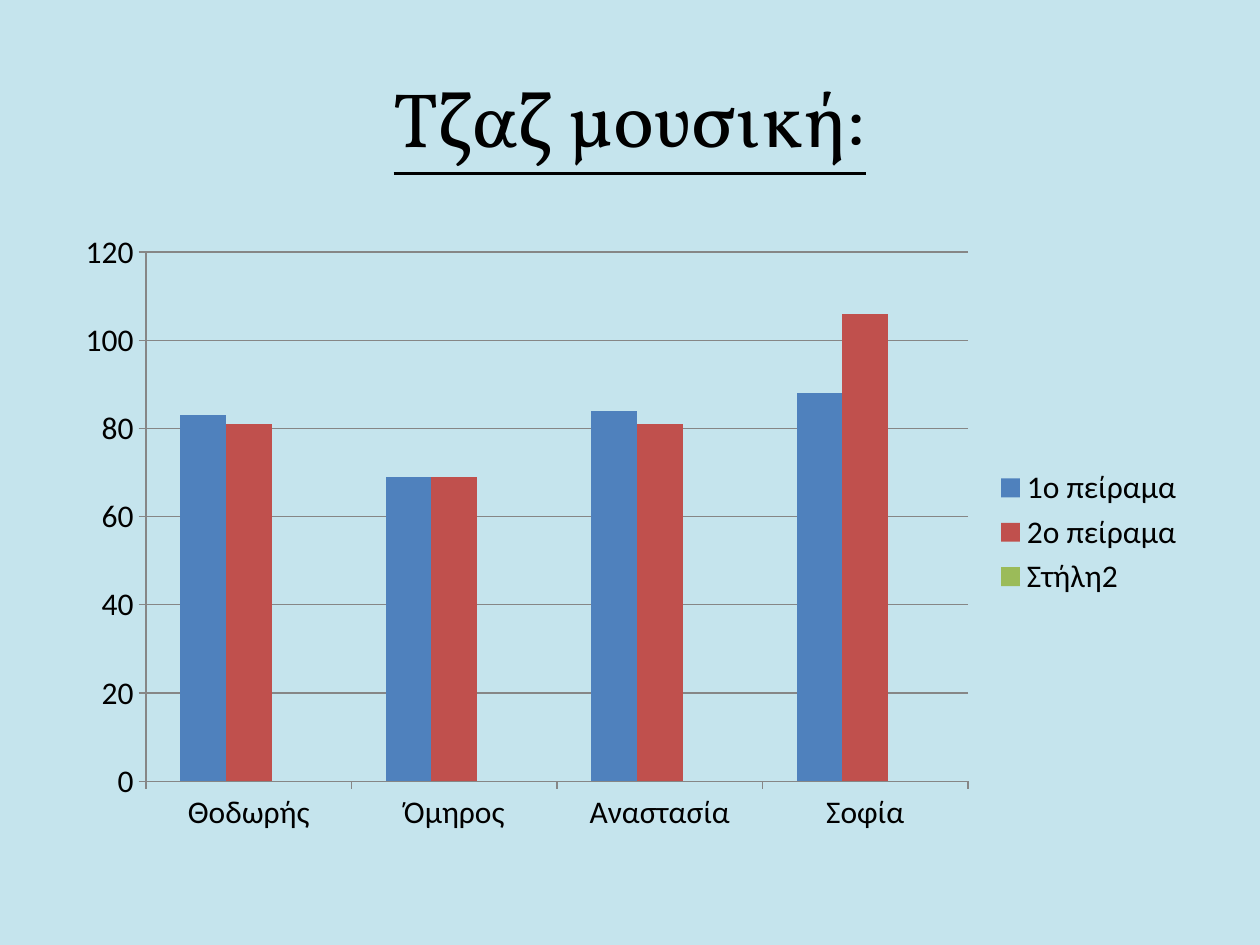
from pptx import Presentation
from pptx.chart.data import CategoryChartData
from pptx.dml.color import RGBColor
from pptx.enum.chart import XL_CHART_TYPE, XL_LEGEND_POSITION, XL_TICK_MARK
from pptx.enum.text import MSO_ANCHOR, PP_ALIGN
from pptx.util import Pt

BACKGROUND = RGBColor(0xC5, 0xE4, 0xED)
BLACK = RGBColor(0, 0, 0)
GRAY = RGBColor(0x86, 0x86, 0x86)
BLUE = RGBColor(0x4F, 0x81, 0xBD)
RED = RGBColor(0xC0, 0x50, 0x4D)
GREEN = RGBColor(0x9B, 0xBB, 0x59)

deck = Presentation()
deck.slide_width, deck.slide_height = Pt(720), Pt(540)
page = deck.slides.add_slide(deck.slide_layouts[5])
page.background.fill.solid()
page.background.fill.fore_color.rgb = BACKGROUND

title = page.shapes.title
title.left, title.top, title.width, title.height = Pt(36), Pt(21.6), Pt(648), Pt(90)
title.text_frame.vertical_anchor = MSO_ANCHOR.MIDDLE
para = title.text_frame.paragraphs[0]
para.alignment = PP_ALIGN.CENTER
span = para.add_run()
span.text = "Τζαζ μουσική:"
span.font.name = "Vollkorn"
span.font.size = Pt(44)
span.font.underline = True
span.font.color.rgb = BLACK

experiments = [
    ("1ο πείραμα", (83, 69, 84, 88), BLUE),
    ("2ο πείραμα", (81, 69, 81, 106), RED),
    ("Στήλη2", (None, None, None, None), GREEN),
]
data = CategoryChartData()
data.categories = ["Θοδωρής", "Όμηρος", "Αναστασία", "Σοφία"]
for name, values, color in experiments:
    data.add_series(name, values)

chart = page.shapes.add_chart(
    XL_CHART_TYPE.COLUMN_CLUSTERED, Pt(36), Pt(126), Pt(648), Pt(356.4), data
).chart
chart.has_title = False
chart.font.name = "Calibri"
chart.font.size = Pt(18)
chart.font.color.rgb = BLACK
chart.has_legend = True
chart.legend.position = XL_LEGEND_POSITION.RIGHT
chart.legend.include_in_layout = False

plot = chart.plots[0]
plot.gap_width = 150
plot.overlap = 0
plot.vary_by_categories = False
for series, (name, values, color) in zip(plot.series, experiments):
    series.invert_if_negative = False
    series.format.fill.solid()
    series.format.fill.fore_color.rgb = color

for axis in (chart.category_axis, chart.value_axis):
    axis.major_tick_mark = XL_TICK_MARK.OUTSIDE
    axis.minor_tick_mark = XL_TICK_MARK.NONE
    axis.format.line.color.rgb = GRAY
    axis.format.line.width = Pt(0.75)

scale = chart.value_axis
scale.minimum_scale, scale.maximum_scale, scale.major_unit = 0, 120, 20
scale.has_major_gridlines = True
scale.major_gridlines.format.line.color.rgb = GRAY
scale.major_gridlines.format.line.width = Pt(0.75)

deck.save("out.pptx")
